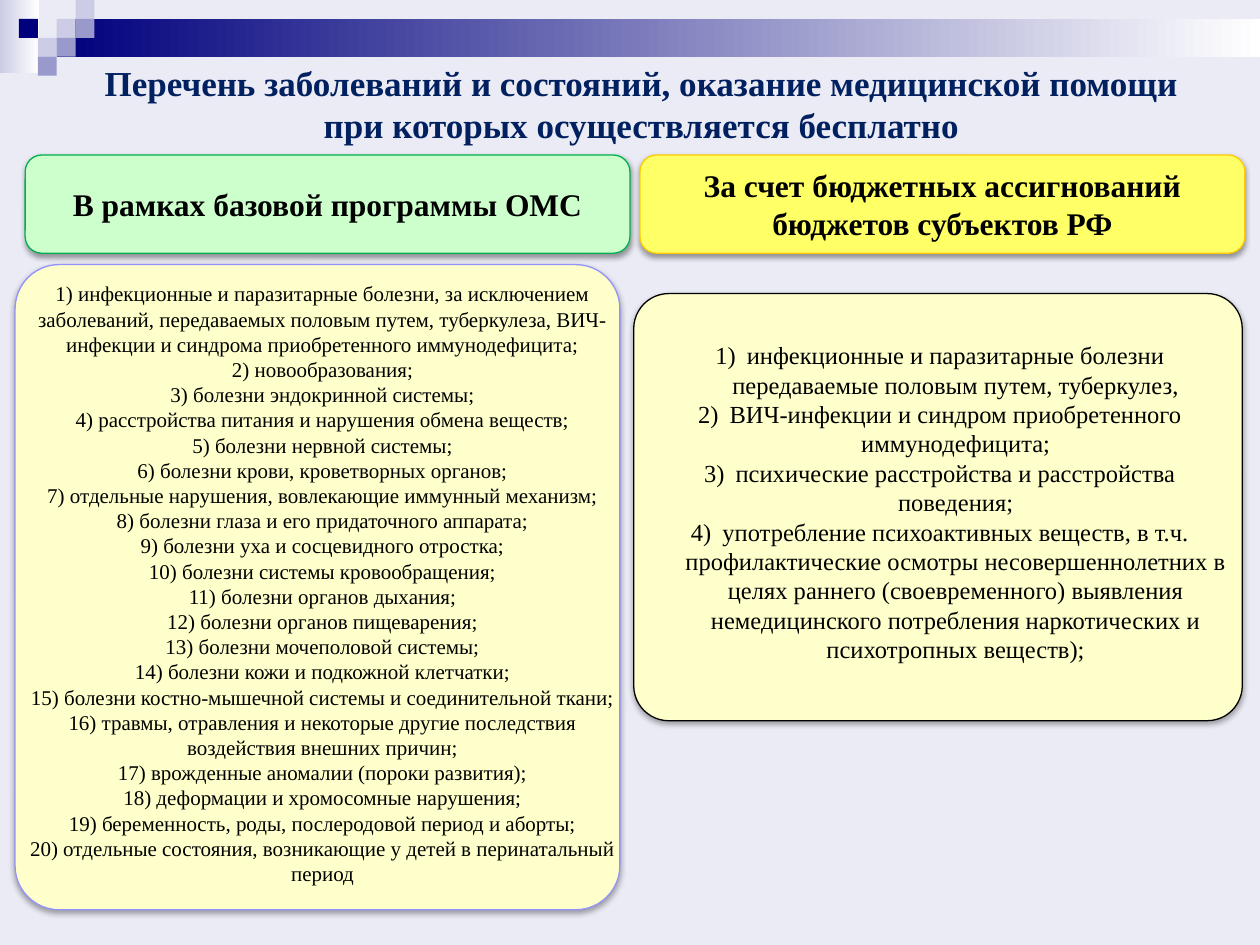
from lxml import etree
from pptx import Presentation
from pptx.dml.color import RGBColor
from pptx.enum.shapes import MSO_SHAPE
from pptx.enum.text import MSO_ANCHOR, PP_ALIGN
from pptx.oxml.ns import qn
from pptx.util import Inches, Pt

RECT = MSO_SHAPE.RECTANGLE
ROUNDED = MSO_SHAPE.ROUNDED_RECTANGLE
MIDDLE = MSO_ANCHOR.MIDDLE
TOP = MSO_ANCHOR.TOP
CENTER = PP_ALIGN.CENTER
FONT = "Times New Roman"

COLORS = {
    "background": "EBEBF5",
    "navy": "00007D",
    "lavender": "CCCCE6",
    "violet": "9999CC",
    "white": "FFFFFF",
    "black": "000000",
    "title": "002060",
    "cream": "FFFFCC",
    "periwinkle": "9393FC",
    "mint": "CCFFCC",
    "green": "00B050",
    "yellow": "FFFF66",
    "amber": "FFCC00",
}

TITLE = ("Перечень заболеваний и состояний, оказание медицинской помощи "
         "при которых осуществляется бесплатно")
INSURANCE_HEADING = "В рамках базовой программы ОМС"
BUDGET_HEADING = "За счет бюджетных ассигнований бюджетов субъектов РФ"

INSURED_DISEASES = [
    "инфекционные и паразитарные болезни, за исключением заболеваний, "
    "передаваемых половым путем, туберкулеза, ВИЧ-инфекции и синдрома "
    "приобретенного иммунодефицита;",
    "новообразования;",
    "болезни эндокринной системы;",
    "расстройства питания и нарушения обмена веществ;",
    "болезни нервной системы;",
    "болезни крови, кроветворных органов;",
    "отдельные нарушения, вовлекающие иммунный механизм;",
    "болезни глаза и его придаточного аппарата;",
    "болезни уха и сосцевидного отростка;",
    "болезни системы кровообращения;",
    "болезни органов дыхания;",
    "болезни органов пищеварения;",
    "болезни мочеполовой системы;",
    "болезни кожи и подкожной клетчатки;",
    "болезни костно-мышечной системы и соединительной ткани;",
    "травмы, отравления и некоторые другие последствия воздействия внешних причин;",
    "врожденные аномалии (пороки развития);",
    "деформации и хромосомные нарушения;",
    "беременность, роды, послеродовой период и аборты;",
    "отдельные состояния, возникающие у детей в перинатальный период",
]
BUDGET_DISEASES = [
    "инфекционные и паразитарные болезни передаваемые половым путем, туберкулез,",
    "ВИЧ-инфекции и синдром приобретенного иммунодефицита;",
    "психические расстройства и расстройства поведения;",
    "употребление психоактивных веществ, в т.ч. профилактические осмотры "
    "несовершеннолетних в целях раннего (своевременного) выявления "
    "немедицинского потребления наркотических и психотропных веществ);",
]


def rgb(name):
    """Return the named colour."""
    return RGBColor.from_string(COLORS[name])


def add_block(slide, box, fill, fade_to=None):
    """Add a borderless rectangle, solid or fading to the right."""
    block = slide.shapes.add_shape(RECT, *map(Inches, box))
    block.shadow.inherit = False
    block.line.fill.background()
    if fade_to:
        block.fill.gradient()
        block.fill.gradient_angle = 0
        for stop, name in zip(block.fill.gradient_stops, (fill, fade_to)):
            stop.color.rgb = rgb(name)
    else:
        block.fill.solid()
        block.fill.fore_color.rgb = rgb(fill)


def add_card(slide, box, fill, border, corner, distance, opacity):
    """Add a rounded card with a soft shadow below it."""
    card = slide.shapes.add_shape(ROUNDED, *map(Inches, box))
    card.adjustments[0] = corner
    card.fill.solid()
    card.fill.fore_color.rgb = rgb(fill)
    card.line.color.rgb = rgb(border)
    card.line.width = Pt(0.75)
    card.shadow.inherit = False
    effects = card._element.spPr.find(qn("a:effectLst"))
    shadow = etree.SubElement(effects, qn("a:outerShdw"), blurRad=str(Pt(3.1)),
                              dist=str(Pt(distance)), dir="5400000", rotWithShape="0")
    tint = etree.SubElement(shadow, qn("a:srgbClr"), val=COLORS["black"])
    etree.SubElement(tint, qn("a:alpha"), val=str(opacity * 1000))
    return card


def write(frame, lines, size, color="black", bold=False, anchor=TOP, numbered=False):
    """Fill a text frame with centred paragraphs."""
    frame.word_wrap = True
    frame.vertical_anchor = anchor
    for index, line in enumerate(lines):
        paragraph = frame.add_paragraph() if index else frame.paragraphs[0]
        paragraph.text = line
        paragraph.alignment = CENTER
        if numbered:
            properties = paragraph._p.get_or_add_pPr()
            properties.set("marL", str(Inches(0.25)))
            properties.set("indent", str(Inches(-0.25)))
            etree.SubElement(properties, qn("a:buAutoNum"), type="arabicParenR")
        paragraph.font.name = FONT
        paragraph.font.size = Pt(size)
        paragraph.font.bold = bold
        paragraph.font.color.rgb = rgb(color)


def add_text(slide, box, lines, size, **style):
    """Add a text box with centred paragraphs."""
    write(slide.shapes.add_textbox(*map(Inches, box)).text_frame, lines, size, **style)


def add_ornament(slide, box):
    """Draw the fading top band and its mosaic of squares."""
    left, top, width, cell = box
    add_block(slide, (left, top, 0.31, 0.58), "lavender", "white")
    add_block(slide, (left + 3 * cell, top + cell, width - 3 * cell, 2 * cell),
              "navy", "white")
    mosaic = [(3, 1, "lavender"), (4, 0, "lavender"), (4, 1, "violet"),
              (2, 2, "lavender"), (1, 1, "navy"), (3, 2, "violet"), (2, 3, "violet")]
    for column, row, fill in mosaic:
        add_block(slide, (left + column * cell, top + row * cell, cell, cell), fill)


def add_heading(slide, box, text, fill, border):
    """Add a column heading card."""
    card = add_card(slide, box, fill, border, 0.17, 1.6, 38)
    write(card.text_frame, [text], 18, bold=True, anchor=MIDDLE)


def add_insurance_list(slide, box):
    """Add the card of diseases covered by basic insurance."""
    left, top, width, height = box
    add_card(slide, box, "cream", "periwinkle", 0.073, 1.8, 35)
    lines = [f"{number}) {name}" for number, name in enumerate(INSURED_DISEASES, 1)]
    add_text(slide, (left, top + 0.08, width + 0.08, height - 0.17), lines, 12)


def add_budget_list(slide, box):
    """Add the card of diseases covered by regional budgets."""
    left, top, width, height = box
    add_card(slide, box, "cream", "black", 0.082, 1.8, 35)
    add_text(slide, (left + 0.03, top + 0.32, width - 0.03, height - 0.7),
             BUDGET_DISEASES, 14, numbered=True)


def main():
    """Build and save the slide."""
    deck = Presentation()
    deck.slide_width, deck.slide_height = Inches(10), Inches(7.5)
    slide = deck.slides.add_slide(deck.slide_layouts[6])
    slide.background.fill.solid()
    slide.background.fill.fore_color.rgb = rgb("background")
    add_ornament(slide, (0, 0, 10, 0.15))
    add_budget_list(slide, (5.03, 2.33, 4.83, 3.39))
    add_insurance_list(slide, (0.12, 2.1, 4.8, 5.12))
    add_heading(slide, (0.2, 1.23, 4.8, 0.78), INSURANCE_HEADING, "mint", "green")
    add_heading(slide, (5.08, 1.23, 4.8, 0.78), BUDGET_HEADING, "yellow", "amber")
    add_text(slide, (0.59, 0.25, 9, 1.14), [TITLE], 20, color="title", bold=True,
             anchor=MIDDLE)
    deck.save("out.pptx")


if __name__ == "__main__":
    main()
